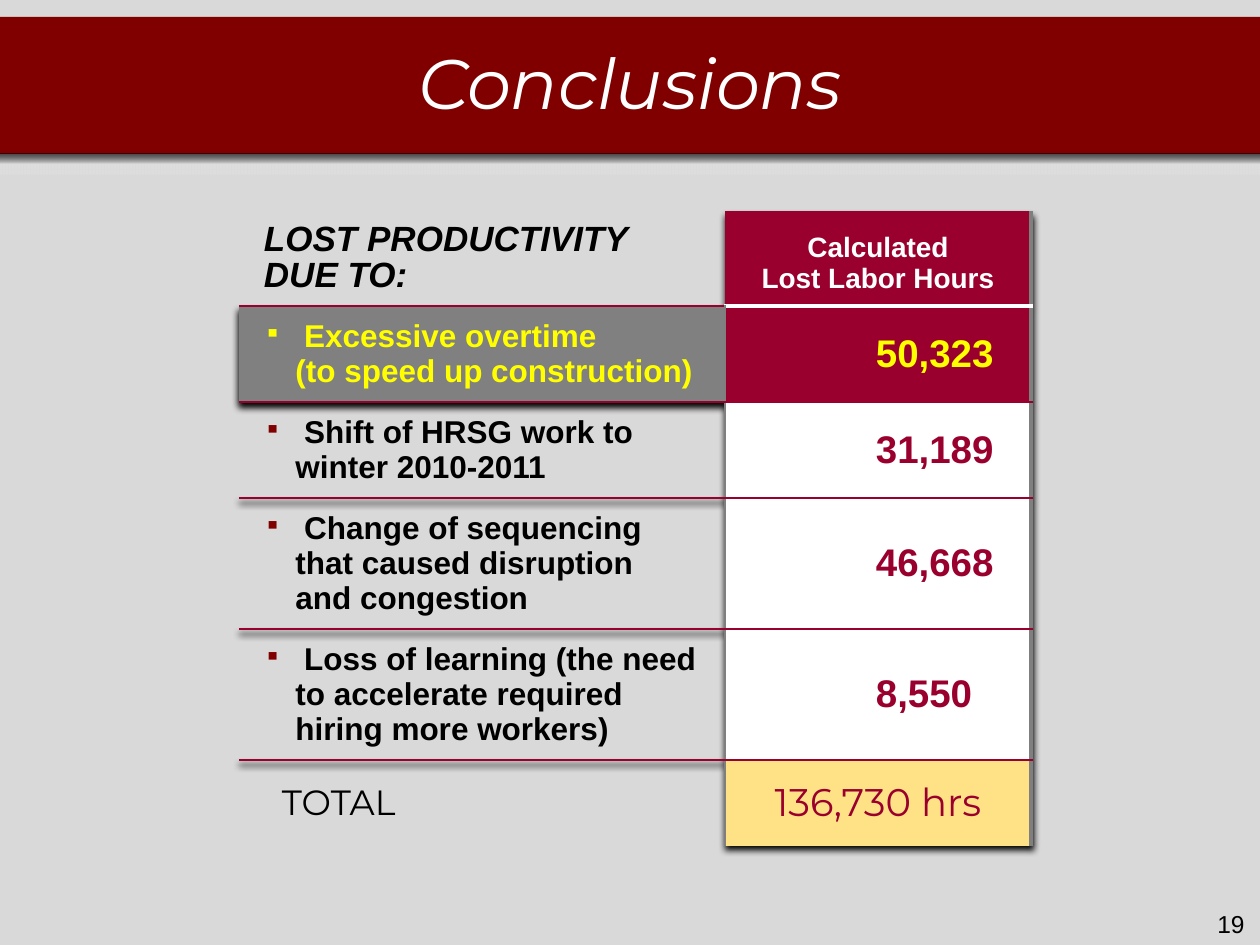
from copy import deepcopy

from lxml.etree import SubElement
from pptx import Presentation
from pptx.dml.color import RGBColor
from pptx.enum.shapes import MSO_SHAPE
from pptx.enum.text import MSO_ANCHOR, PP_ALIGN
from pptx.oxml import parse_xml
from pptx.oxml.ns import nsdecls, qn
from pptx.util import Emu, Pt

EMU_PER_PX = 914400 / 126

BLACK = RGBColor(0x00, 0x00, 0x00)
WHITE = RGBColor(0xFF, 0xFF, 0xFF)
PAGE_GRAY = RGBColor(0xD9, 0xD9, 0xD9)
PALE_GRAY = RGBColor(0xDD, 0xDD, 0xDD)
MID_GRAY = RGBColor(0x80, 0x80, 0x80)
EDGE_GRAY = RGBColor(0x7F, 0x7F, 0x7F)
MAROON = RGBColor(0x80, 0x00, 0x00)
CRIMSON = RGBColor(0x9A, 0x00, 0x2E)
YELLOW = RGBColor(0xFF, 0xFF, 0x00)
GOLD = RGBColor(0xFF, 0xE2, 0x85)

RULE = (CRIMSON, 1.5)
WHITE_RULE = (WHITE, 2.25)
THIN_EDGE = (EDGE_GRAY, 1)
THICK_EDGE = (EDGE_GRAY, 2.25)

TITLE = dict(name="Montserrat", size=Pt(40), italic=True, color=WHITE)
HEADING = dict(name="Arial", size=Pt(20), bold=True, italic=True, color=BLACK)
HOURS_HEADING = dict(name="Arial", size=Pt(16), bold=True, color=WHITE)
CAUSE = dict(name="Arial", size=Pt(18), bold=True, color=BLACK)
HOURS = dict(name="Arial", size=Pt(22), bold=True, color=CRIMSON)
TOTAL = dict(name="Montserrat", size=Pt(20), bold=False, color=BLACK)
TOTAL_HOURS = dict(TOTAL, size=Pt(22), color=CRIMSON)
PAGE_NUMBER = dict(name="Arial", size=Pt(14), color=BLACK)

# Cause, hours, row height
CAUSES = [
    (" Excessive overtime\v(to speed up construction)", "50,323", 96),
    (" Shift of HRSG work to\vwinter 2010-2011", "31,189", 96),
    (" Change of sequencing\vthat caused disruption\vand congestion", "46,668", 131),
    (" Loss of learning (the need to accelerate required hiring more workers)",
     "8,550", 131),
]
HEADING_HEIGHT, TOTAL_HEIGHT = 95, 86


def px(length):
    return Emu(round(length * EMU_PER_PX))


class SlideBuilder:
    """Draws styled elements on the current slide, with lengths in px."""

    def __init__(self, page):
        self.page = page

    def set_text(self, frame, text, style, align=PP_ALIGN.LEFT):
        frame.word_wrap = True
        frame.text = text
        para = frame.paragraphs[0]
        para.alignment = align
        for span in para.runs:
            for key, value in style.items():
                if key == "color":
                    span.font.color.rgb = value
                else:
                    setattr(span.font, key, value)
        for line_break in para._p.findall(qn("a:br")):
            line_break.insert(0, deepcopy(para.runs[0]._r.rPr))
        return para

    def band(self, top, height, color=None):
        shape = self.page.shapes.add_shape(
            MSO_SHAPE.RECTANGLE, 0, px(top), px(1260), px(height))
        shape.shadow.inherit = False
        shape.line.fill.background()
        if color is not None:
            shape.fill.solid()
            shape.fill.fore_color.rgb = color
        return shape

    def fading_band(self, top, height):
        """Band that fades downwards from translucent black to pale gray."""
        shape = self.band(top, height)
        shape.fill.gradient()
        shape.fill.gradient_angle = 270
        for stop, color, position in zip(
                shape.fill.gradient_stops, (BLACK, PALE_GRAY), (0, 0.5)):
            stop.color.rgb = color
            stop.position = position
        black = shape.element.spPr.find(".//" + qn("a:srgbClr"))
        SubElement(black, qn("a:alpha"), val="68000")

    def title(self, text, left, top, width, height):
        box = self.page.shapes.title
        box.left, box.top, box.width, box.height = map(px, (left, top, width, height))
        box.element.getparent().append(box.element)
        box.text_frame.vertical_anchor = MSO_ANCHOR.MIDDLE
        self.set_text(box.text_frame, text, TITLE, PP_ALIGN.CENTER)

    def text(self, text, left, top, width, height, style, align):
        box = self.page.shapes.add_textbox(*map(px, (left, top, width, height)))
        self.set_text(box.text_frame, text, style, align)

    def table(self, left, top, widths, heights):
        """Unstyled table with a soft shadow below it."""
        frame = self.page.shapes.add_table(
            len(heights), len(widths), px(left), px(top),
            px(sum(widths)), px(sum(heights)))
        table = frame.table
        table.first_row = table.horz_banding = False
        for column, width in zip(table.columns, widths):
            column.width = px(width)
        for row, height in zip(table.rows, heights):
            row.height = px(height)
        properties = table._tbl.tblPr
        properties.find(qn("a:tableStyleId")).text = (
            "{2D5ABB26-0587-4C30-8999-92F81FD0307C}")
        properties.insert(0, parse_xml(
            f'<a:effectLst {nsdecls("a")}><a:outerShdw blurRad="50800" '
            'dist="38100" dir="5400000" algn="t" rotWithShape="0">'
            '<a:srgbClr val="000000"/></a:outerShdw></a:effectLst>'))
        return table

    def cell(self, cell, text, style, borders, fill=None, align=PP_ALIGN.LEFT,
             anchor=MSO_ANCHOR.MIDDLE, indent=0):
        """Fill one cell; borders maps L, R, T and B to (color, points)."""
        cell.margin_left = cell.margin_right = px(25)
        cell.margin_top = cell.margin_bottom = px(12)
        cell.vertical_anchor = anchor
        properties = cell._tc.get_or_add_tcPr()
        for side in "LRTB":
            color, points = borders.get(side, (None, 0))
            line = SubElement(properties, qn("a:ln" + side), w=str(int(Pt(points))))
            if color is None:
                SubElement(line, qn("a:noFill"))
            else:
                paint = SubElement(line, qn("a:solidFill"))
                SubElement(paint, qn("a:srgbClr"), val=str(color))
        if fill is None:
            cell.fill.background()
        else:
            cell.fill.solid()
            cell.fill.fore_color.rgb = fill
        para = self.set_text(cell.text_frame, text, style, align)
        if indent:
            para._p.get_or_add_pPr().set("marL", str(int(px(indent))))
        return para

    def bullet(self, para, color):
        properties = para._p.get_or_add_pPr()
        properties.set("marL", "228600")
        properties.set("indent", "-228600")
        paint = SubElement(properties, qn("a:buClr"))
        SubElement(paint, qn("a:srgbClr"), val=str(color))
        SubElement(properties, qn("a:buSzPct"), val="75000")
        SubElement(properties, qn("a:buChar"), char="▪")


def add_losses(builder):
    heights = [HEADING_HEIGHT, *(height for _, _, height in CAUSES), TOTAL_HEIGHT]
    table = builder.table(239, 211, [486, 306], heights)

    heading = builder.cell(table.cell(0, 0), "LOST PRODUCTIVITY\vDUE TO:", HEADING,
                           {"B": RULE}, anchor=MSO_ANCHOR.BOTTOM)
    heading.line_spacing = 0.9
    builder.cell(table.cell(0, 1), "Calculated\vLost Labor Hours", HOURS_HEADING,
                 {"R": THICK_EDGE, "B": WHITE_RULE}, CRIMSON,
                 PP_ALIGN.CENTER, MSO_ANCHOR.BOTTOM)

    for row, (cause, hours, _) in enumerate(CAUSES, start=1):
        stressed = row == 1
        accent = {"color": YELLOW} if stressed else {}
        para = builder.cell(table.cell(row, 0), cause, {**CAUSE, **accent},
                            {"T": RULE, "R": THIN_EDGE, "B": RULE},
                            MID_GRAY if stressed else None)
        builder.bullet(para, YELLOW if stressed else MAROON)
        builder.cell(table.cell(row, 1), hours, {**HOURS, **accent},
                     {"L": THIN_EDGE, "R": THICK_EDGE, "B": RULE,
                      "T": WHITE_RULE if stressed else RULE},
                     CRIMSON if stressed else WHITE, indent=126)

    last = len(heights) - 1
    builder.cell(table.cell(last, 0), "TOTAL", TOTAL,
                 {"T": RULE, "R": THIN_EDGE}, indent=18)
    builder.cell(table.cell(last, 1), "136,730 hrs", TOTAL_HOURS,
                 {"L": THIN_EDGE, "T": RULE, "R": THICK_EDGE}, GOLD, PP_ALIGN.CENTER)


def main():
    deck = Presentation()
    deck.slide_width, deck.slide_height = px(1260), px(945)
    builder = SlideBuilder(deck.slides.add_slide(deck.slide_layouts[5]))
    builder.band(0, 945, PAGE_GRAY)
    builder.band(17, 137, MAROON)
    builder.fading_band(154, 21)
    builder.title("Conclusions", 0, 24, 1260, 116)
    add_losses(builder)
    builder.text("19", 963, 903, 294, 42, PAGE_NUMBER, PP_ALIGN.RIGHT)
    deck.save("out.pptx")


if __name__ == "__main__":
    main()
